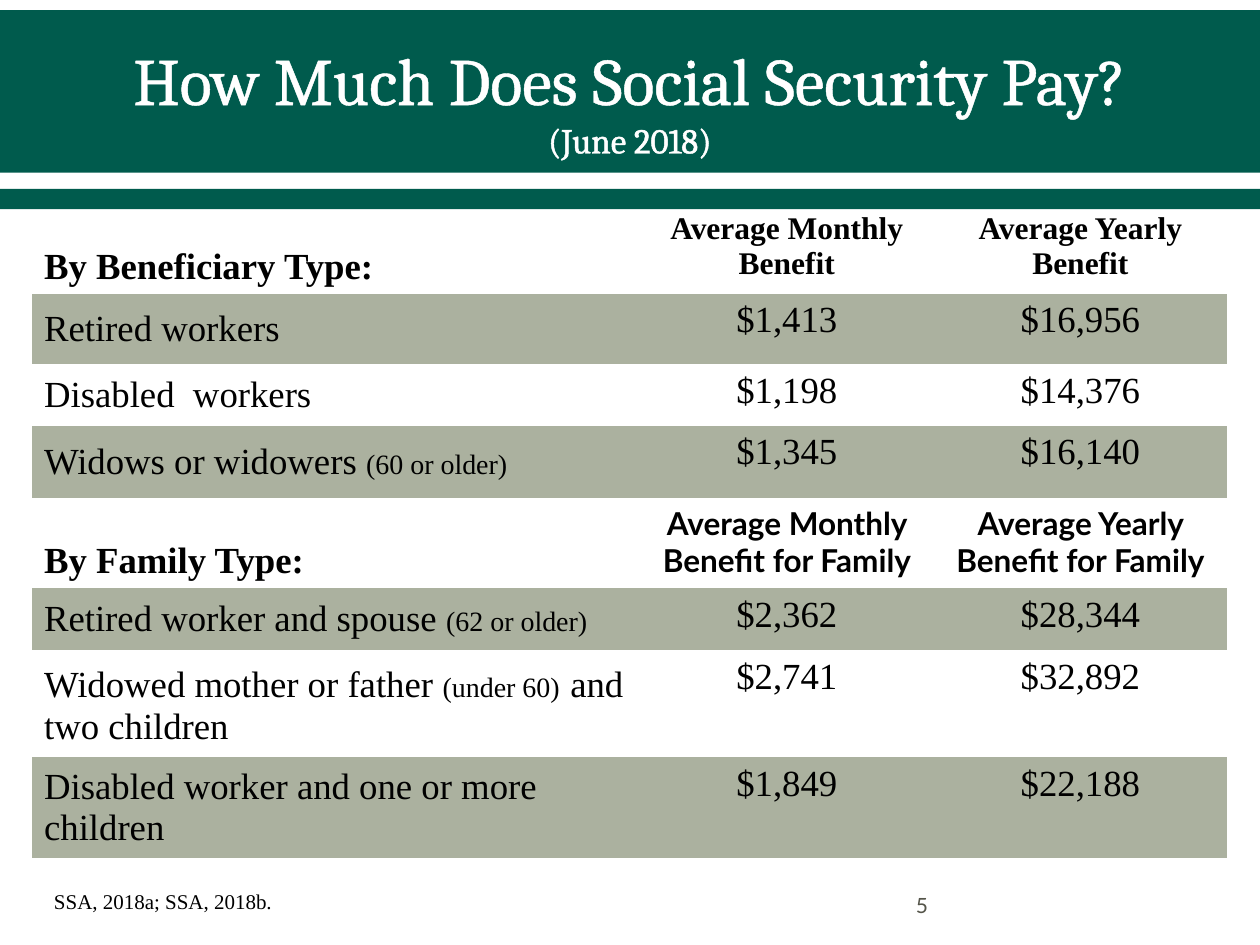
from lxml import etree
from pptx import Presentation
from pptx.dml import color as c
from pptx.enum import shapes, text
from pptx.oxml import ns
from pptx.util import Inches, Pt

COLORS = {"green": "005B4D", "sage": "ABB19F", "white": "FFFFFF", "black": "000000", "gray": "55554A"}
SERIF, SANS, TITLE = "Times New Roman", "Lato", "Cambria"
NO_GRID_STYLE = "{2D5ABB26-0587-4C30-8999-92F81FD0307C}"
LEFT, CENTER = text.PP_ALIGN.LEFT, text.PP_ALIGN.CENTER
TOP, MIDDLE, BOTTOM = text.MSO_ANCHOR.TOP, text.MSO_ANCHOR.MIDDLE, text.MSO_ANCHOR.BOTTOM

COLUMN_WIDTHS = [4.83, 2.33, 2.33]
ROW_HEIGHTS = [0.75, 0.56, 0.49, 0.57, 0.72, 0.49, 0.85, 0.79]
SHADED_ROWS = {1, 3, 5, 7}
SECTIONS = [
    {
        "title": "By Beneficiary Type:",
        "headings": ["Average Monthly Benefit", "Average Yearly Benefit"],
        "format": {"font": SERIF, "anchor": MIDDLE},
        "rows": [
            ([("Retired workers", 21)], "$1,413", "$16,956"),
            ([("Disabled  workers", 21)], "$1,198", "$14,376"),
            ([("Widows or widowers ", 21), ("(60 or older)", 16)], "$1,345", "$16,140"),
        ],
    },
    {
        "title": "By Family Type:",
        "headings": ["Average Monthly Benefit for Family", "Average Yearly Benefit for Family"],
        "format": {"font": SANS, "anchor": TOP},
        "rows": [
            ([("Retired worker and spouse ", 21), ("(62 or older)", 16)], "$2,362", "$28,344"),
            ([("Widowed mother or father ", 21), ("(under 60)", 16), (" ", 24), ("and two children", 21)],
             "$2,741", "$32,892"),
            ([("Disabled worker and one or more children", 21)], "$1,849", "$22,188"),
        ],
    },
]


def add_run(paragraph, content, size=21, font=SERIF, color="black", bold=False, outline=None):
    run = paragraph.add_run()
    run.text = content
    run.font.size = Pt(size)
    run.font.name = font
    run.font.bold = bold
    run.font.color.rgb = c.RGBColor.from_string(COLORS[color])
    if outline:
        line = etree.Element(ns.qn("a:ln"), w=str(Pt(outline)))
        fill = etree.SubElement(line, ns.qn("a:solidFill"))
        etree.SubElement(fill, ns.qn("a:srgbClr"), val=COLORS[color])
        run.font._element.insert(0, line)


def add_text(slide, left, top, width, height, anchor=TOP, align=LEFT):
    frame = slide.shapes.add_textbox(left, top, width, height).text_frame
    frame.word_wrap = True
    frame.vertical_anchor = anchor
    frame.paragraphs[0].alignment = align
    return frame.paragraphs[0]


def add_bar(slide, left, top, width, height):
    shape = slide.shapes.add_shape(shapes.MSO_SHAPE.RECTANGLE, left, top, width, height)
    shape.shadow.inherit = False
    shape.fill.solid()
    shape.fill.fore_color.rgb = c.RGBColor.from_string(COLORS["green"])
    shape.line.fill.background()


def add_header(slide, left, top, width):
    add_bar(slide, left, top, width, Inches(1.29))
    add_bar(slide, left, top + Inches(1.42), width, Inches(0.16))
    paragraph = add_text(slide, left, top + Inches(0.17), width, Inches(1.08), MIDDLE, CENTER)
    add_run(paragraph, "How Much Does Social Security Pay?", size=38, font=TITLE, color="white", outline=1.1)
    paragraph.add_line_break()
    add_run(paragraph, "(June 2018)", size=20, font=TITLE, color="white", outline=1.1)


def fill_cell(cell, runs, anchor=TOP, align=CENTER, **run_format):
    cell.vertical_anchor = anchor
    paragraph = cell.text_frame.paragraphs[0]
    paragraph.alignment = align
    for content, size in runs:
        add_run(paragraph, content, size=size, **run_format)


def add_benefit_table(slide, left, top, width):
    height = Inches(sum(ROW_HEIGHTS))
    table = slide.shapes.add_table(len(ROW_HEIGHTS), len(COLUMN_WIDTHS), left, top, width, height).table
    table.first_row = table.horz_banding = False
    table._tbl.tblPr.find(ns.qn("a:tableStyleId")).text = NO_GRID_STYLE
    for column, column_width in zip(table.columns, COLUMN_WIDTHS):
        column.width = Inches(column_width)
    for index, (row, row_height) in enumerate(zip(table.rows, ROW_HEIGHTS)):
        row.height = Inches(row_height)
        for cell in row.cells:
            if index in SHADED_ROWS:
                cell.fill.solid()
                cell.fill.fore_color.rgb = c.RGBColor.from_string(COLORS["sage"])
            else:
                cell.fill.background()

    rows = iter(table.rows)
    for section in SECTIONS:
        label_cell, *heading_cells = next(rows).cells
        fill_cell(label_cell, [(section["title"], 21)], anchor=BOTTOM, align=LEFT, bold=True)
        for cell, heading in zip(heading_cells, section["headings"]):
            fill_cell(cell, [(heading, 18)], bold=True, **section["format"])
        for label, *amounts in section["rows"]:
            label_cell, *amount_cells = next(rows).cells
            fill_cell(label_cell, label, anchor=MIDDLE, align=LEFT)
            for cell, amount in zip(amount_cells, amounts):
                fill_cell(cell, [(amount, 21)])


def add_footer(slide, left, top):
    source = add_text(slide, left, top, Inches(5.75), Inches(0.3))
    add_run(source, "SSA, 2018a; SSA, 2018b.", size=12)
    number = add_text(slide, left + Inches(6.84), top, Inches(1.92), Inches(0.36), MIDDLE)
    add_run(number, "5", size=12, font=SANS, color="gray")


def main():
    presentation = Presentation()
    presentation.slide_width, presentation.slide_height = Inches(10), Inches(7.5)
    slide = presentation.slides.add_slide(presentation.slide_layouts[6])
    add_header(slide, Inches(0), Inches(0.08), Inches(10))
    add_footer(slide, Inches(0.33), Inches(7))
    add_benefit_table(slide, Inches(0.25), Inches(1.58), Inches(9.5))
    presentation.save("out.pptx")


if __name__ == "__main__":
    main()
